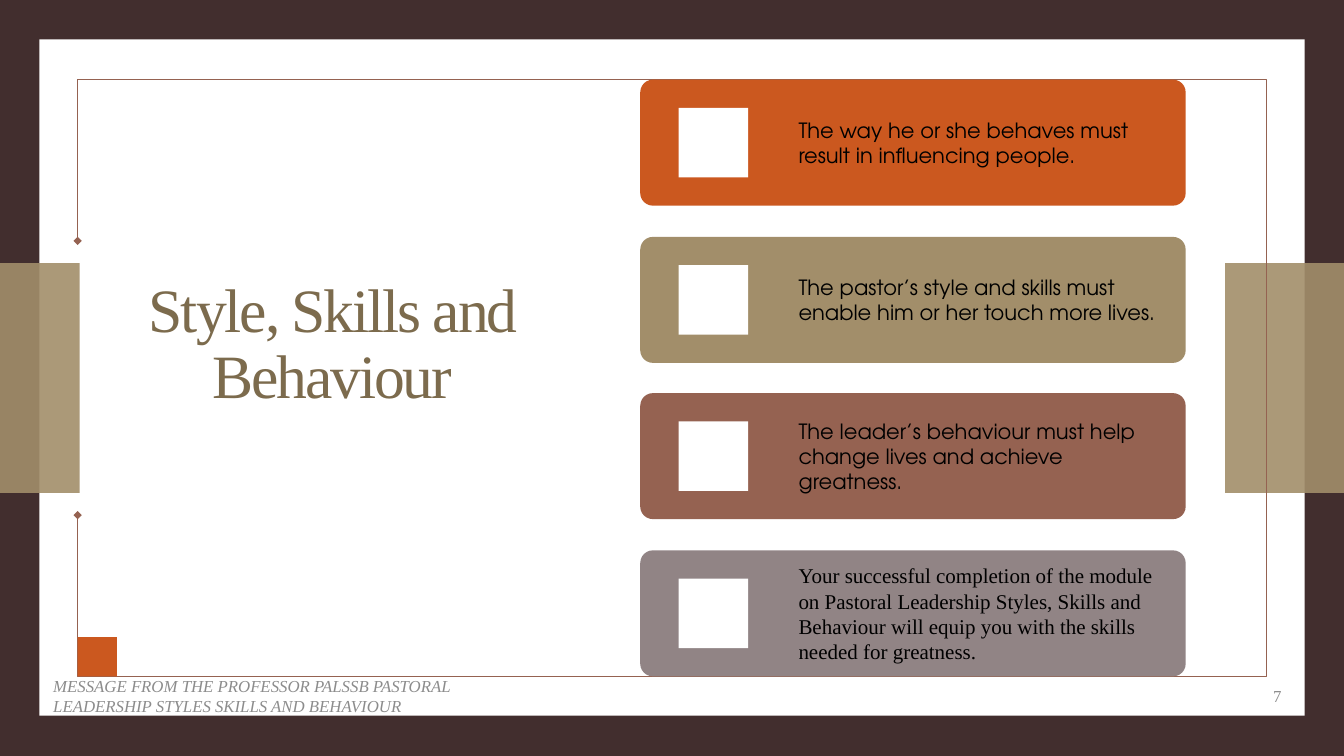
from lxml import etree
from pptx import Presentation
from pptx.dml.color import RGBColor
from pptx.enum.shapes import MSO_SHAPE as SHAPE
from pptx.enum.text import MSO_ANCHOR as ANCHOR, PP_ALIGN as ALIGN
from pptx.oxml.ns import qn
from pptx.util import Inches, Pt

SERIF, SANS = "Times New Roman", "TeX Gyre Adventor"
BROWN, WHITE, BLACK, GREY = "422E2E", "FFFFFF", "000000", "8C8C8C"
ORANGE, TAN, RUST, MAUVE, TITLE = "CB581F", "A28E6A", "956251", "918485", "7C6B4D"


def rgb(color):
    return RGBColor.from_string(color)


class SlideBuilder:
    def __init__(self, slide):
        self.slide = slide

    def background(self, color):
        fill = self.slide.background.fill
        fill.solid()
        fill.fore_color.rgb = rgb(color)

    def box(self, x, y, w, h, color, kind=SHAPE.RECTANGLE, opacity=100, radius=None):
        """Add a filled shape without outline; opacity is in percent."""
        sp = self.slide.shapes.add_shape(kind, Inches(x), Inches(y), Inches(w), Inches(h))
        sp.shadow.inherit = False
        sp.line.fill.background()
        sp.fill.solid()
        sp.fill.fore_color.rgb = rgb(color)
        if radius is not None:
            sp.adjustments[0] = radius
        if opacity < 100:
            clr = sp._element.spPr.find(qn("a:solidFill"))[0]
            etree.SubElement(clr, qn("a:alpha"), val=str(opacity * 1000))

    def open_frame(self, points, color):
        """Draw an open line through the points, with a diamond at each end."""
        start, *rest = [(Inches(x), Inches(y)) for x, y in points]
        builder = self.slide.shapes.build_freeform(*start)
        builder.add_line_segments(rest, close=False)
        sp = builder.convert_to_shape()
        sp.shadow.inherit = False
        sp.fill.background()
        sp.line.color.rgb = rgb(color)
        sp.line.width = Pt(1)
        for end in ("a:headEnd", "a:tailEnd"):
            etree.SubElement(sp.line._get_or_add_ln(), qn(end), type="diamond")

    def text(self, x, y, w, h, words, size, color, font=SERIF, align=ALIGN.LEFT,
             anchor=ANCHOR.MIDDLE, inset=None, italic=False, line_spacing=None, tracking=None):
        sp = self.slide.shapes.add_textbox(Inches(x), Inches(y), Inches(w), Inches(h))
        tf = sp.text_frame
        tf.word_wrap = True
        tf.vertical_anchor = anchor
        if inset is not None:
            tf.margin_left = tf.margin_right = tf.margin_top = tf.margin_bottom = Inches(inset)
        p = tf.paragraphs[0]
        p.alignment = align
        p.line_spacing = line_spacing
        r = p.add_run()
        r.text = words
        r.font.name = font
        r.font.size = Pt(size)
        r.font.italic = italic
        r.font.color.rgb = rgb(color)
        if tracking is not None:
            r.font._element.set("spc", str(int(tracking * 100)))

    def card(self, y, color, words, font):
        self.box(6.35, y, 5.41, 1.25, color, SHAPE.ROUNDED_RECTANGLE, radius=0.1)
        self.box(6.73, y + 0.28, 0.69, 0.69, WHITE)
        self.text(7.79, y, 3.97, 1.25, words, 15, BLACK, font, inset=0.13)


def main():
    prs = Presentation()
    prs.slide_width, prs.slide_height = Inches(13.33), Inches(7.5)
    s = SlideBuilder(prs.slides.add_slide(prs.slide_layouts[6]))

    s.background(BROWN)
    s.box(0.39, 0.39, 12.55, 6.71, WHITE)
    for x, w in ((0, 0.79), (12.15, 1.18)):
        s.box(x, 2.61, w, 2.28, TAN, opacity=90)
    left, top, right, bottom = 0.77, 0.79, 12.56, 6.71
    s.open_frame([(left, 2.39), (left, top), (right, top),
                  (right, bottom), (left, bottom), (left, 5.11)], RUST)
    s.box(left, 6.32, 0.39, 0.39, ORANGE)

    s.text(1.1, 2.68, 4.39, 1.46, "Style, Skills and Behaviour", 44, TITLE,
           align=ALIGN.CENTER, anchor=ANCHOR.BOTTOM, line_spacing=0.9, tracking=-1.5)

    cards = [
        (ORANGE, "The way he or she behaves must result in influencing people.", SANS),
        (TAN, "The pastor’s style and skills must enable him or her touch more lives.", SANS),
        (RUST, "The leader’s behaviour must help change lives and achieve greatness.", SANS),
        (MAUVE, "Your successful completion of the module on Pastoral Leadership Styles, "
                "Skills and Behaviour will equip you with the skills needed for greatness.", SERIF),
    ]
    pitch = 1.557
    for i, (color, words, font) in enumerate(cards):
        s.card(round(top + i * pitch, 2), color, words, font)

    s.text(0.43, 6.82, 4.5, 0.16, "MESSAGE FROM THE PROFESSOR PALSSB PASTORAL "
           "LEADERSHIP STYLES SKILLS AND BEHAVIOUR", 12, GREY, italic=True)
    s.text(9.81, 6.82, 3, 0.16, "7", 12, GREY, align=ALIGN.RIGHT)

    prs.save("out.pptx")


if __name__ == "__main__":
    main()
